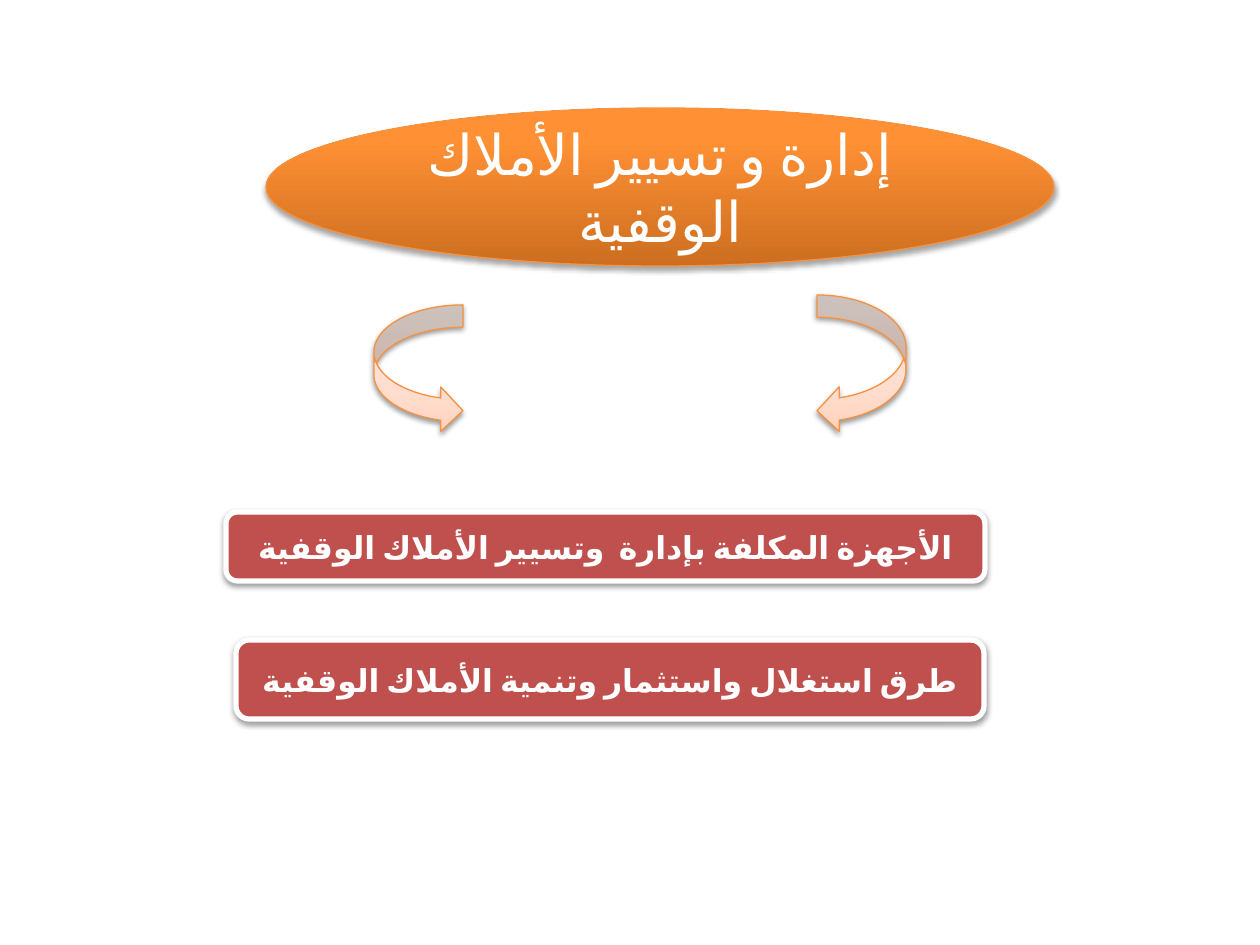
import pptx
import pptx.util
import pptx.dml.color
import pptx.enum.lang
import pptx.enum.shapes
import pptx.enum.text
import pptx.oxml.ns
from lxml import etree

RGB = pptx.dml.color.RGBColor
KIND = pptx.enum.shapes.MSO_SHAPE
qn = pptx.oxml.ns.qn

WHITE = RGB(0xFF, 0xFF, 0xFF)
BLACK = RGB(0x00, 0x00, 0x00)
RED = RGB(0xC0, 0x50, 0x4D)
ORANGE = RGB(0xF6, 0x92, 0x40)
# Stops run from the bottom edge to the top: (percent, colour)
AMBER = [(0, RGB(0xCC, 0x6E, 0x20)), (80, RGB(0xFF, 0x90, 0x34)),
         (100, RGB(0xFF, 0x91, 0x36))]
PEACH = [(0, RGB(0xFF, 0xD2, 0xBD)), (35, RGB(0xFF, 0xDE, 0xD0)),
         (100, RGB(0xFF, 0xF2, 0xED))]
FONT = "Calibri"


def px(n):
    return pptx.util.Emu(round(n * 914400 / 126))


def tint(parent, tag, color, **attrs):
    """Add an XML element that holds one RGB colour."""
    node = etree.SubElement(parent, qn(tag), attrs)
    return etree.SubElement(node, qn("a:srgbClr"), val=str(color))


def blend(shape, stops):
    """Fill the shape with a vertical gradient."""
    shape.fill.gradient()
    shape.fill.gradient_angle = 90
    items = next(shape.element.spPr.iter(qn("a:gsLst")))
    for old in list(items):
        items.remove(old)
    for pos, color in stops:
        tint(items, "a:gs", color, pos=str(pos * 1000))


def shade(shape, drop, alpha):
    """Cast a soft shadow straight down."""
    shape.shadow.inherit = False
    effects = shape.element.spPr.find(qn("a:effectLst"))
    color = tint(effects, "a:outerShdw", BLACK,
                 blurRad=str(pptx.util.Pt(3.1)), dist=str(pptx.util.Pt(drop)),
                 dir="5400000", rotWithShape="0")
    etree.SubElement(color, qn("a:alpha"), val=str(alpha * 1000))


def draw(slide, kind, box, line, width, drop=1.6, alpha=38):
    shape = slide.shapes.add_shape(kind, *map(px, box))
    shape.line.color.rgb = line
    shape.line.width = pptx.util.Pt(width)
    shade(shape, drop, alpha)
    return shape


def write(shape, text, size, bold=False):
    frame = shape.text_frame
    frame.word_wrap = True
    frame.vertical_anchor = pptx.enum.text.MSO_ANCHOR.MIDDLE
    para = frame.paragraphs[0]
    para.alignment = pptx.enum.text.PP_ALIGN.CENTER
    para._p.get_or_add_pPr().set("rtl", "1")
    run = para.add_run()
    run.text = text
    run.font.name = FONT
    run.font.size = pptx.util.Pt(size)
    run.font.bold = bold
    run.font.color.rgb = WHITE
    run.font.language_id = pptx.enum.lang.MSO_LANGUAGE_ID.ARABIC_ALGERIA
    # Arabic letters take the complex-script font
    etree.SubElement(run._r.get_or_add_rPr(), qn("a:cs"), typeface=FONT)


def head(slide, box, text):
    oval = draw(slide, KIND.OVAL, box, ORANGE, 0.75, 1.8, 35)
    blend(oval, AMBER)
    write(oval, text, 32)


def arrow(slide, kind, box):
    blend(draw(slide, kind, box, ORANGE, 0.75), PEACH)


def topic(slide, box, text):
    bar = draw(slide, KIND.ROUNDED_RECTANGLE, box, WHITE, 3)
    bar.fill.solid()
    bar.fill.fore_color.rgb = RED
    write(bar, text, 18, True)


def main():
    deck = pptx.Presentation()
    deck.slide_width, deck.slide_height = px(1260), px(945)
    slide = deck.slides.add_slide(deck.slide_layouts[6])
    head(slide, (266, 108, 788, 158), "إدارة و تسيير الأملاك الوقفية")
    arrow(slide, KIND.CURVED_LEFT_ARROW, (817, 295, 89, 138))
    arrow(slide, KIND.CURVED_RIGHT_ARROW, (374, 305, 89, 128))
    topic(slide, (226, 512, 759, 69),
          "الأجهزة المكلفة بإدارة  وتسيير الأملاك الوقفية")
    topic(slide, (236, 640, 748, 79),
          "طرق استغلال واستثمار وتنمية الأملاك الوقفية")
    deck.save("out.pptx")


if __name__ == "__main__":
    main()
